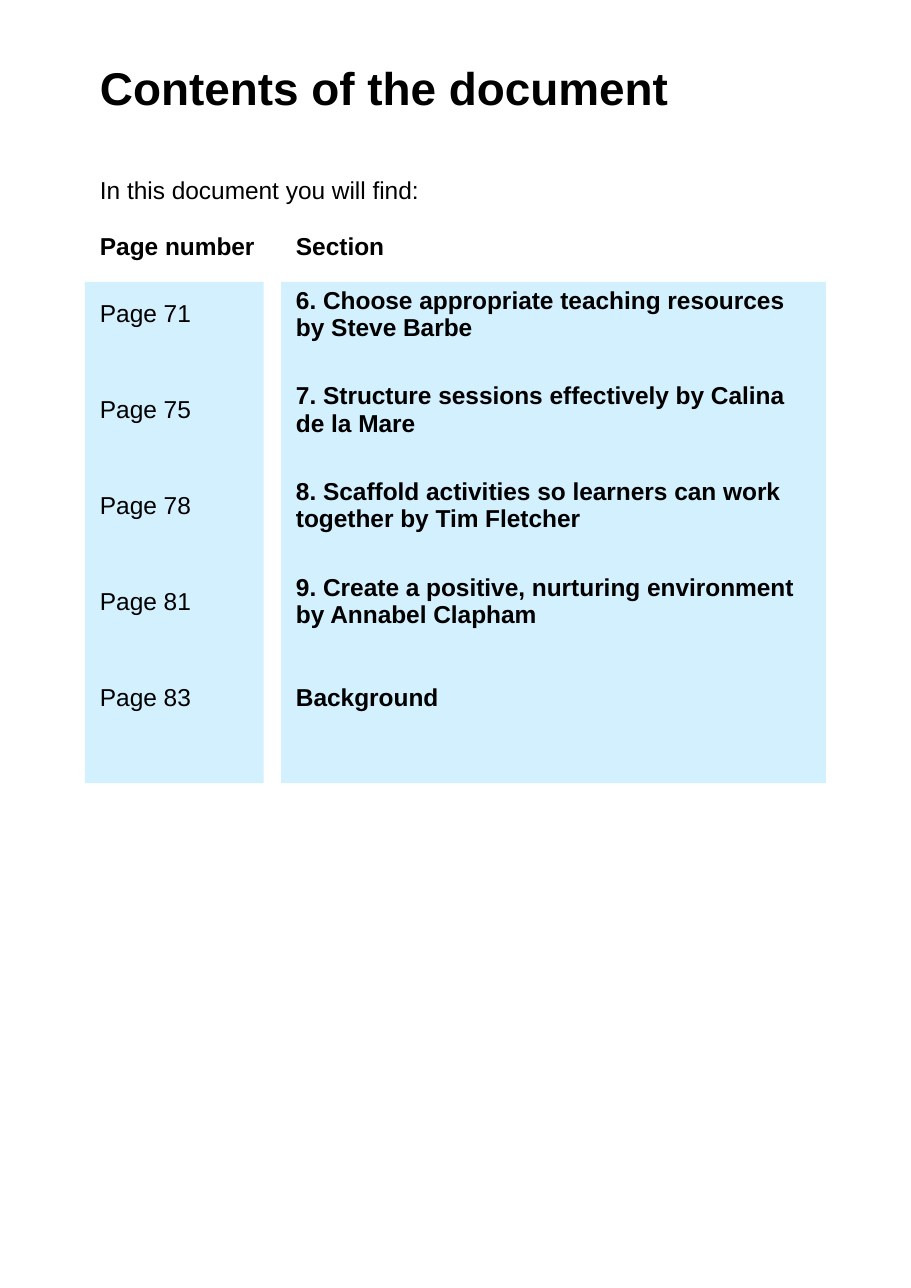
from pptx import Presentation
from pptx.dml.color import RGBColor
from pptx.enum import shapes, text
from pptx.oxml.ns import qn
from pptx.util import Cm, Pt

BLACK = RGBColor(0x00, 0x00, 0x00)
PALE_BLUE = RGBColor(0xD2, 0xF0, 0xFD)
NO_STYLE_NO_GRID = "{2D5ABB26-0587-4C30-8999-92F81FD0307C}"

HEADING_ROWS = [2.62, 1.29, 0.88]
ENTRY_ROW = 2.21
SPARE_ROWS = [2.08] * 6
ENTRIES = [
    ("Page 71", "6. Choose appropriate teaching resources by Steve Barbe"),
    ("Page 75", "7. Structure sessions effectively by Calina de la Mare"),
    ("Page 78 ", "8. Scaffold activities so learners can work together by Tim Fletcher"),
    ("Page 81", "9. Create a positive, nurturing environment by Annabel Clapham"),
    ("Page 83", "Background"),
]


def add_panel(slide, left, top, width, height):
    sp = slide.shapes.add_shape(shapes.MSO_SHAPE.RECTANGLE,
                                left, top, width, height)
    sp.shadow.inherit = False
    sp.fill.solid()
    sp.fill.fore_color.rgb = PALE_BLUE
    sp.line.fill.background()


def add_panels(slide, left, top, width, height):
    """Place the page and section panels side by side, with a gap between."""
    page_width, gap = Cm(4.12), Cm(0.4)
    add_panel(slide, left, top, page_width, height)
    section_left = page_width + gap
    add_panel(slide, left + section_left, top, width - section_left, height)


def write_cell(cell, words, size=16, bold=False, anchor=text.MSO_ANCHOR.TOP):
    cell.vertical_anchor = anchor
    p = cell.text_frame.paragraphs[0]
    p.text = words
    p.font.name = "Arial"
    p.font.size = Pt(size)
    p.font.bold = bold
    p.font.color.rgb = BLACK


def add_contents_table(slide, left, top, width):
    heights = HEADING_ROWS + [ENTRY_ROW] * len(ENTRIES) + SPARE_ROWS
    frame = slide.shapes.add_table(len(heights), 2, left, top, width,
                                   Cm(sum(heights)))
    for style in frame._element.iter(qn("a:tableStyleId")):
        style.text = NO_STYLE_NO_GRID
    table = frame.table
    table.first_row = table.horz_banding = False
    page_width = Cm(4.52)
    table.columns[0].width = page_width
    table.columns[1].width = width - page_width
    for row, height in zip(table.rows, heights):
        row.height = Cm(height)
    for cell in table.iter_cells():
        cell.fill.background()

    for row in range(2):
        table.cell(row, 0).merge(table.cell(row, 1))
    write_cell(table.cell(0, 0), "Contents of the document", 30, bold=True)
    write_cell(table.cell(1, 0), "In this document you will find:")
    for col, heading in enumerate(("Page number", "Section")):
        write_cell(table.cell(2, col), heading, bold=True)
    for row, (page, section) in enumerate(ENTRIES, len(HEADING_ROWS)):
        write_cell(table.cell(row, 0), page, anchor=text.MSO_ANCHOR.MIDDLE)
        write_cell(table.cell(row, 1), section, bold=True,
                   anchor=text.MSO_ANCHOR.MIDDLE)


def main():
    prs = Presentation()
    prs.slide_width, prs.slide_height = Cm(21), Cm(29.7)
    slide = prs.slides.add_slide(prs.slide_layouts[6])
    add_panels(slide, Cm(1.96), Cm(6.5), Cm(17.08), Cm(11.56))
    add_contents_table(slide, Cm(2.05), Cm(1.35), Cm(16.92))
    prs.save("out.pptx")


if __name__ == "__main__":
    main()
